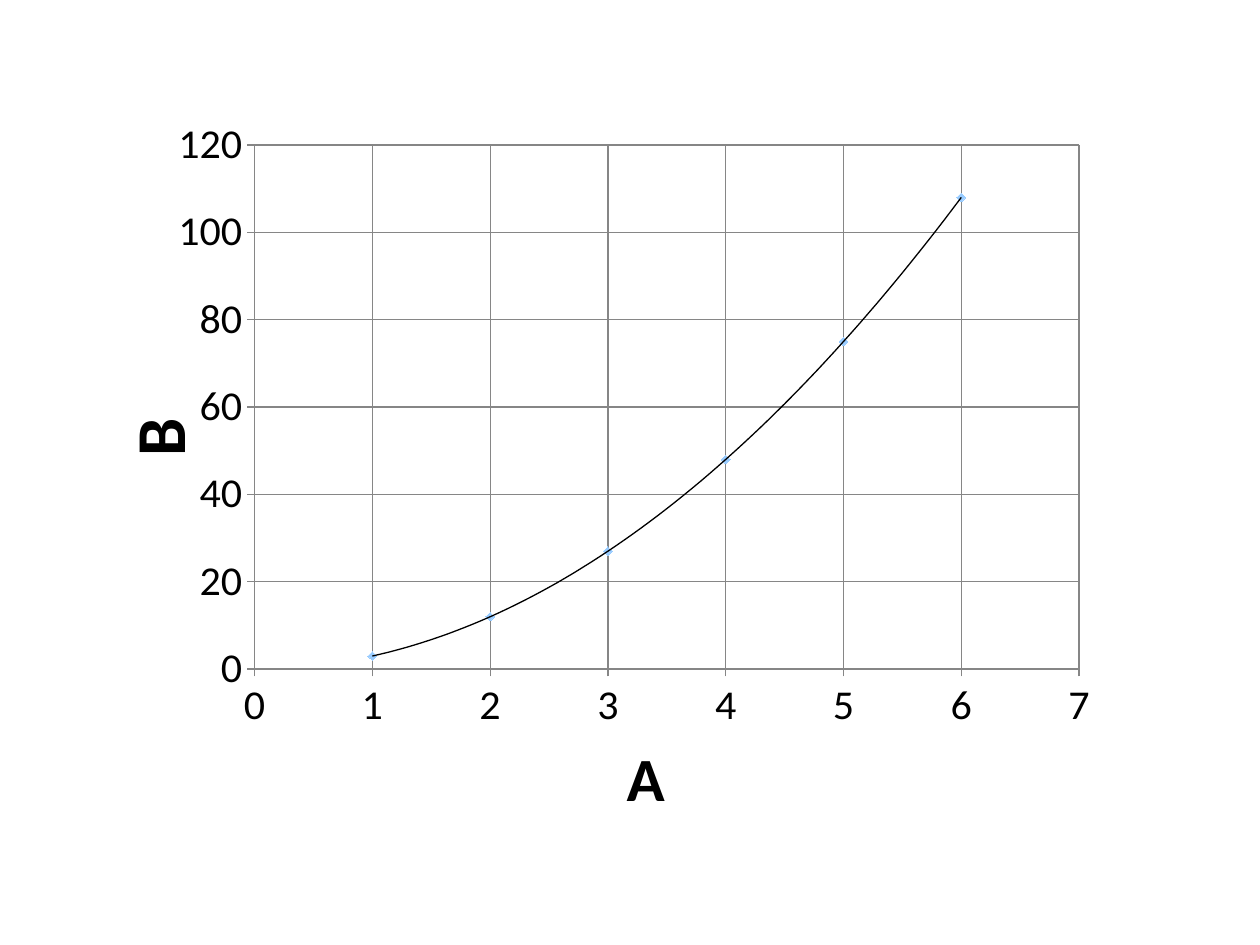
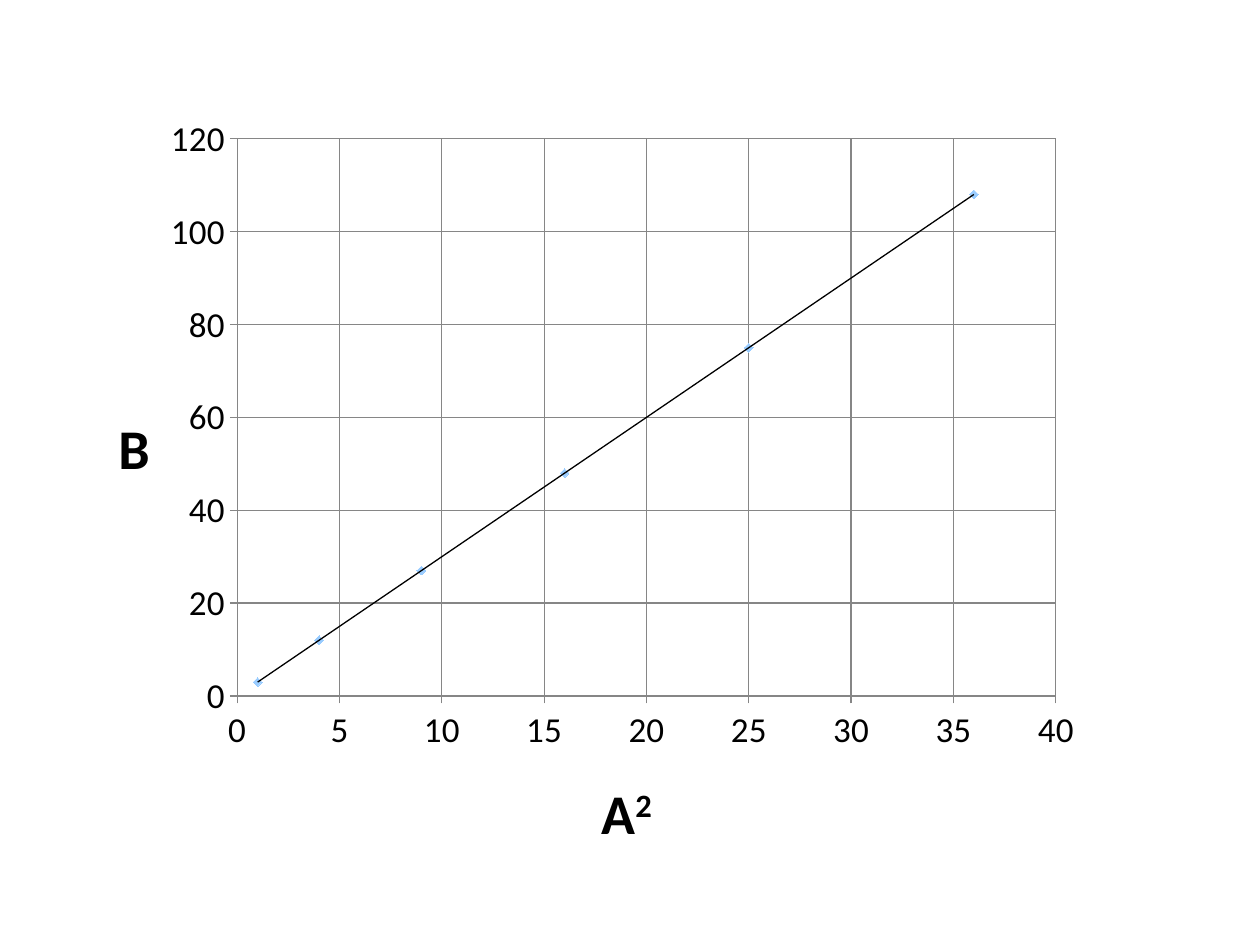
"""Build two slides that plot B against A and against A squared."""
from dataclasses import dataclass

import lxml.etree
import pptx
import pptx.chart.axis
import pptx.chart.data
import pptx.chart.series
import pptx.dml.color
import pptx.enum.chart
import pptx.oxml
import pptx.oxml.ns
import pptx.presentation
import pptx.util
from pptx.util import Cm, Pt


@dataclass(frozen=True)
class Theme:
    font: str = "Calibri"
    text: str = "000000"
    grid: str = "868686"
    marker: str = "99CCFF"
    trend: str = "000000"
    line_width: float = 0.75
    marker_size: int = 5


@dataclass(frozen=True)
class AxisTitle:
    text: str
    size: int
    left: float
    top: float
    exponent: str = ""
    rotation: int = 0


@dataclass(frozen=True)
class AxisScale:
    title: AxisTitle
    maximum: float
    step: float


@dataclass(frozen=True)
class Graph:
    frame: tuple[float, float, float, float]
    plot_area: tuple[float, float, float, float]
    label_size: int
    horizontal: AxisScale
    vertical: AxisScale
    power: int
    trend: str


THEME = Theme()
A_VALUES = range(1, 7)
B_VALUES = [3 * a**2 for a in A_VALUES]
GRAPHS = (
    Graph(
        frame=(1.57, 1.57, 20.83, 15.29),
        plot_area=(0.171, 0.091, 0.798, 0.709),
        label_size=24,
        horizontal=AxisScale(AxisTitle("A", 36, 0.52, 0.874), 7, 1),
        vertical=AxisScale(AxisTitle("B", 40, 0.02, 0.444, rotation=-90), 120, 20),
        power=1,
        trend="power",
    ),
    Graph(
        frame=(1.98, 1.78, 20.45, 15.67),
        plot_area=(0.137, 0.065, 0.807, 0.717),
        label_size=20,
        horizontal=AxisScale(AxisTitle("A", 32, 0.492, 0.882, exponent="2"), 40, 5),
        vertical=AxisScale(AxisTitle("B", 32, 0.01, 0.4), 120, 20),
        power=2,
        trend="linear",
    ),
)


def rgb(value: str) -> pptx.dml.color.RGBColor:
    return pptx.dml.color.RGBColor.from_string(value)


def set_layout(parent: lxml.etree.ElementBase, index: int, **settings: object) -> None:
    for old in parent.findall(pptx.oxml.ns.qn("c:layout")):
        parent.remove(old)
    entries = "".join(f'<c:{name} val="{value}"/>' for name, value in settings.items())
    parent.insert(index, pptx.oxml.parse_xml(
        f'<c:layout {pptx.oxml.ns.nsdecls("c")}>'
        f"<c:manualLayout>{entries}</c:manualLayout></c:layout>"
    ))


def write_axis_title(axis: pptx.chart.axis.ValueAxis, title: AxisTitle) -> None:
    frame = axis.axis_title.text_frame
    frame._txBody.bodyPr.set("rot", str(title.rotation * 60000))
    for text, baseline in ((title.text, 0), (title.exponent, 30000)):
        if text:
            run = frame.paragraphs[0].add_run()
            run.text = text
            run.font.name = THEME.font
            run.font.size = Pt(title.size)
            run.font.bold = True
            run.font.color.rgb = rgb(THEME.text)
            run.font._element.set("baseline", str(baseline))
    set_layout(axis.axis_title._element, 1, xMode="edge", yMode="edge",
               x=title.left, y=title.top)


def format_axis(axis: pptx.chart.axis.ValueAxis, scale: AxisScale) -> None:
    axis.minimum_scale = 0
    axis.maximum_scale = scale.maximum
    axis.major_unit = scale.step
    axis.has_major_gridlines = True
    axis.major_tick_mark = pptx.enum.chart.XL_TICK_MARK.OUTSIDE
    axis.minor_tick_mark = pptx.enum.chart.XL_TICK_MARK.NONE
    axis.tick_labels.number_format = "General"
    axis.tick_labels.number_format_is_linked = False
    for line in (axis.format.line, axis.major_gridlines.format.line):
        line.color.rgb = rgb(THEME.grid)
        line.width = Pt(THEME.line_width)
    write_axis_title(axis, scale.title)


def format_points(points: pptx.chart.series.XySeries, trend: str) -> None:
    points.format.line.fill.background()
    points.marker.style = pptx.enum.chart.XL_MARKER_STYLE.DIAMOND
    points.marker.size = THEME.marker_size
    points.marker.format.fill.solid()
    points.marker.format.fill.fore_color.rgb = rgb(THEME.marker)
    points.marker.format.line.fill.background()
    points._element.find(pptx.oxml.ns.qn("c:xVal")).addprevious(pptx.oxml.parse_xml(
        f'<c:trendline {pptx.oxml.ns.nsdecls("c", "a")}>'
        f'<c:spPr><a:ln w="{Pt(THEME.line_width)}"><a:solidFill>'
        f'<a:srgbClr val="{THEME.trend}"/></a:solidFill></a:ln></c:spPr>'
        f'<c:trendlineType val="{trend}"/>'
        '<c:dispRSqr val="0"/><c:dispEq val="0"/></c:trendline>'
    ))


def add_graph(deck: pptx.presentation.Presentation, graph: Graph) -> None:
    slide = deck.slides.add_slide(deck.slide_layouts[6])
    measurements = pptx.chart.data.XyChartData()
    relation = measurements.add_series("Series 1")
    for a, b in zip(A_VALUES, B_VALUES):
        relation.add_data_point(a**graph.power, b)
    chart = slide.shapes.add_chart(
        pptx.enum.chart.XL_CHART_TYPE.XY_SCATTER,
        *(Cm(length) for length in graph.frame),
        measurements,
    ).chart
    chart.has_title = False
    chart.has_legend = False
    chart.font.name = THEME.font
    chart.font.size = Pt(graph.label_size)
    chart.font.color.rgb = rgb(THEME.text)
    chart.plots[0].vary_by_categories = False
    left, top, width, height = graph.plot_area
    plot_area = chart._chartSpace.find(".//" + pptx.oxml.ns.qn("c:plotArea"))
    set_layout(plot_area, 0, layoutTarget="inner", xMode="edge", yMode="edge",
               x=left, y=top, w=width, h=height)
    format_axis(chart.category_axis, graph.horizontal)
    format_axis(chart.value_axis, graph.vertical)
    points = chart.plots[0].series[0]
    points.smooth = False
    format_points(points, graph.trend)


def main() -> None:
    deck = pptx.Presentation()
    deck.slide_width, deck.slide_height = Cm(25.4), Cm(19.05)
    for graph in GRAPHS:
        add_graph(deck, graph)
    deck.save("out.pptx")


if __name__ == "__main__":
    main()
